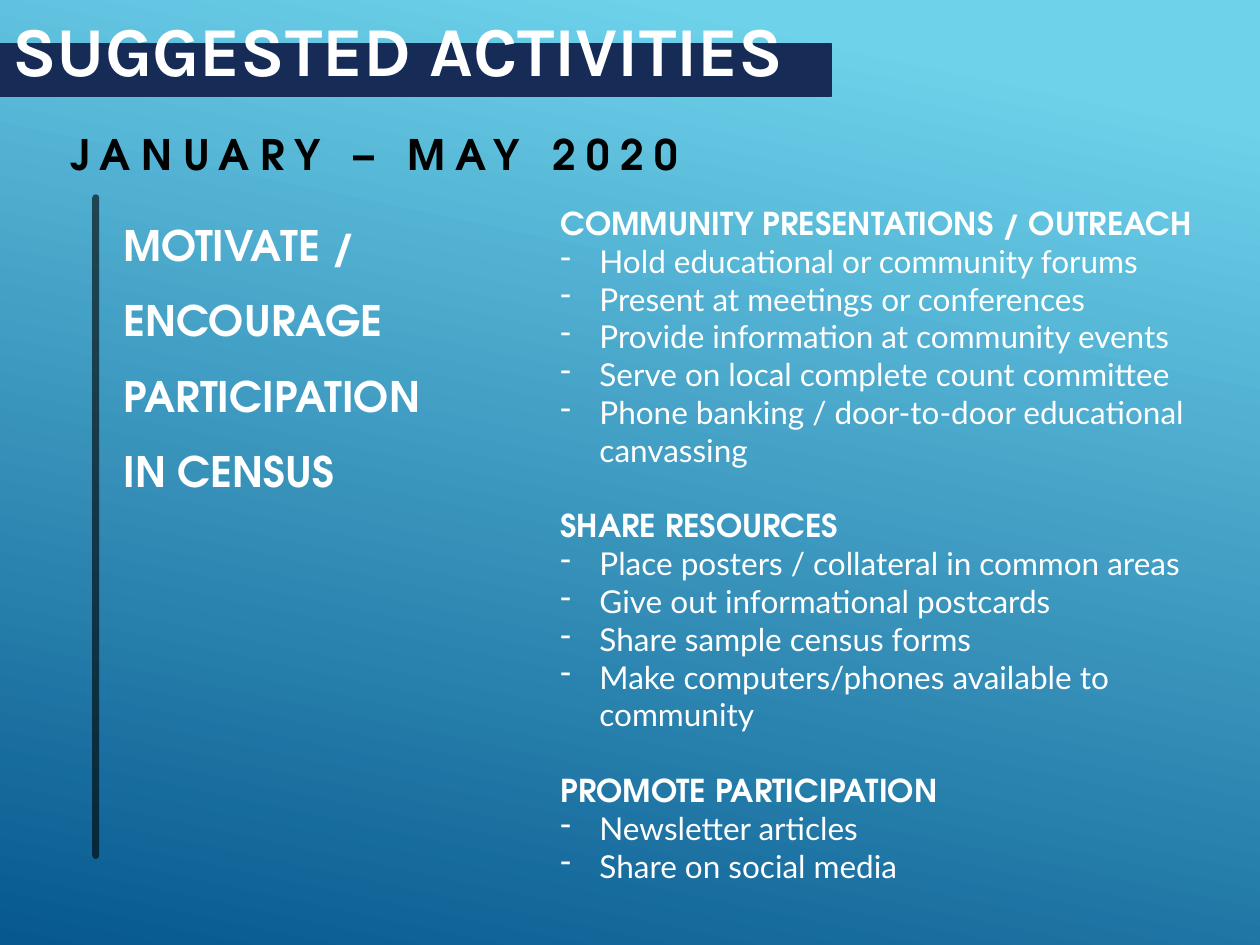
import pptx
import pptx.dml.color
import pptx.enum.shapes
import pptx.enum.text
import pptx.oxml.ns
import pptx.util
from lxml import etree

Inches, Pt = pptx.util.Inches, pptx.util.Pt
HEADING_FONT = "TeX Gyre Adventor"
BODY_FONT = "Lato"
WHITE, BLACK, NAVY = "FFFFFF", "000000", "162B55"

ACTIVITIES = {
    "COMMUNITY PRESENTATIONS / OUTREACH": [
        "Hold educational or community forums",
        "Present at meetings or conferences",
        "Provide information at community events",
        "Serve on local complete count committee",
        "Phone banking / door-to-door educational canvassing",
    ],
    "SHARE RESOURCES": [
        "Place posters / collateral in common areas",
        "Give out informational postcards",
        "Share sample census forms",
        "Make computers/phones available to community",
    ],
    "PROMOTE PARTICIPATION": [
        "Newsletter articles",
        "Share on social media",
    ],
}


def rgb(value):
    return pptx.dml.color.RGBColor.from_string(value)


def apply(target, values):
    for name, value in values.items():
        setattr(target, name, value)


def add_xml(parent, tag, **attributes):
    return etree.SubElement(parent, pptx.oxml.ns.qn(tag), attributes)


class SlideBuilder:
    def __init__(self, slide):
        self.slide = slide

    def background(self, stops, angle):
        fill = self.slide.background.fill
        fill.gradient()
        fill.gradient_angle = angle
        for stop, (position, color) in zip(fill.gradient_stops, stops):
            stop.position = position
            stop.color.rgb = rgb(color)

    def bar(self, left, top, width, height, color):
        shape = self.slide.shapes.add_shape(
            pptx.enum.shapes.MSO_SHAPE.RECTANGLE,
            Inches(left), Inches(top), Inches(width), Inches(height))
        shape.shadow.inherit = False
        shape.fill.solid()
        shape.fill.fore_color.rgb = rgb(color)
        shape.line.color.rgb = rgb(color)
        shape.line.width = Pt(1)

    def vertical_rule(self, x, top, bottom, color, width, opacity):
        connector = self.slide.shapes.add_connector(
            pptx.enum.shapes.MSO_CONNECTOR.STRAIGHT,
            Inches(x), Inches(top), Inches(x), Inches(bottom))
        connector.line.color.rgb = rgb(color)
        connector.line.width = Pt(width)
        properties = connector._element.spPr
        properties.find(pptx.oxml.ns.qn("a:ln")).set("cap", "rnd")
        color_element = next(properties.iter(pptx.oxml.ns.qn("a:srgbClr")))
        add_xml(color_element, "a:alpha", val=str(opacity * 1000))
        add_xml(properties, "a:effectLst")

    def text_box(self, left, top, width, height):
        box = self.slide.shapes.add_textbox(
            Inches(left), Inches(top), Inches(width), Inches(height))
        apply(box.text_frame, {
            "word_wrap": True,
            "auto_size": pptx.enum.text.MSO_AUTO_SIZE.SHAPE_TO_FIT_TEXT})
        return box.text_frame

    def add_text(self, paragraph, text, size, font=HEADING_FONT, color=WHITE,
                 bold=True, spacing=0, **layout):
        run = paragraph.add_run()
        run.text = text
        apply(run.font, {"name": font, "size": Pt(size), "bold": bold})
        run.font.color.rgb = rgb(color)
        if spacing:
            run.font._element.set("spc", str(spacing * 100))
        apply(paragraph, layout)

    def dash_bullet(self, paragraph, indent):
        properties = paragraph._p.get_or_add_pPr()
        properties.set("marL", str(Inches(indent)))
        properties.set("indent", str(-Inches(indent)))
        add_xml(properties, "a:buChar", char="-")

    def activity_list(self, frame, groups, size, gap):
        paragraph = frame.paragraphs[0]
        for index, (heading, items) in enumerate(groups.items()):
            if index:
                paragraph = frame.add_paragraph()
            self.add_text(paragraph, heading, size,
                          space_before=Pt(gap if index else 0))
            for item in items:
                paragraph = frame.add_paragraph()
                self.add_text(paragraph, item, size, BODY_FONT, bold=False)
                self.dash_bullet(paragraph, 0.31)


def main():
    presentation = pptx.Presentation()
    apply(presentation, {"slide_width": Inches(10), "slide_height": Inches(7.5)})
    slide = presentation.slides.add_slide(presentation.slide_layouts[6])
    builder = SlideBuilder(slide)
    builder.background([(0.1, "6ED2EB"), (1, "06588E")], 258)

    # Title over its bar
    builder.bar(0, 0.35, 6.6, 0.41, NAVY)
    title = builder.text_box(0, 0, 8.68, 0.77)
    builder.add_text(title.paragraphs[0], "SUGGESTED ACTIVITIES", 40, "Karla")

    # Period
    period = builder.text_box(0.46, 0.97, 9.41, 0.5)
    builder.add_text(period.paragraphs[0], "JANUARY – MAY 2020", 24,
                     color=BLACK, spacing=6)

    # Goal beside the vertical rule
    builder.vertical_rule(0.76, 1.57, 6.79, BLACK, 4, 60)
    goal = builder.text_box(0.88, 1.49, 2.71, 2.52)
    builder.add_text(goal.paragraphs[0],
                     "MOTIVATE / ENCOURAGE PARTICIPATION IN CENSUS", 24,
                     line_spacing=1.5, space_after=Pt(3))

    # Activities by group
    activities = builder.text_box(4.35, 1.57, 5.37, 5.86)
    builder.activity_list(activities, ACTIVITIES, 18, 21.6)

    presentation.save("out.pptx")


if __name__ == "__main__":
    main()
